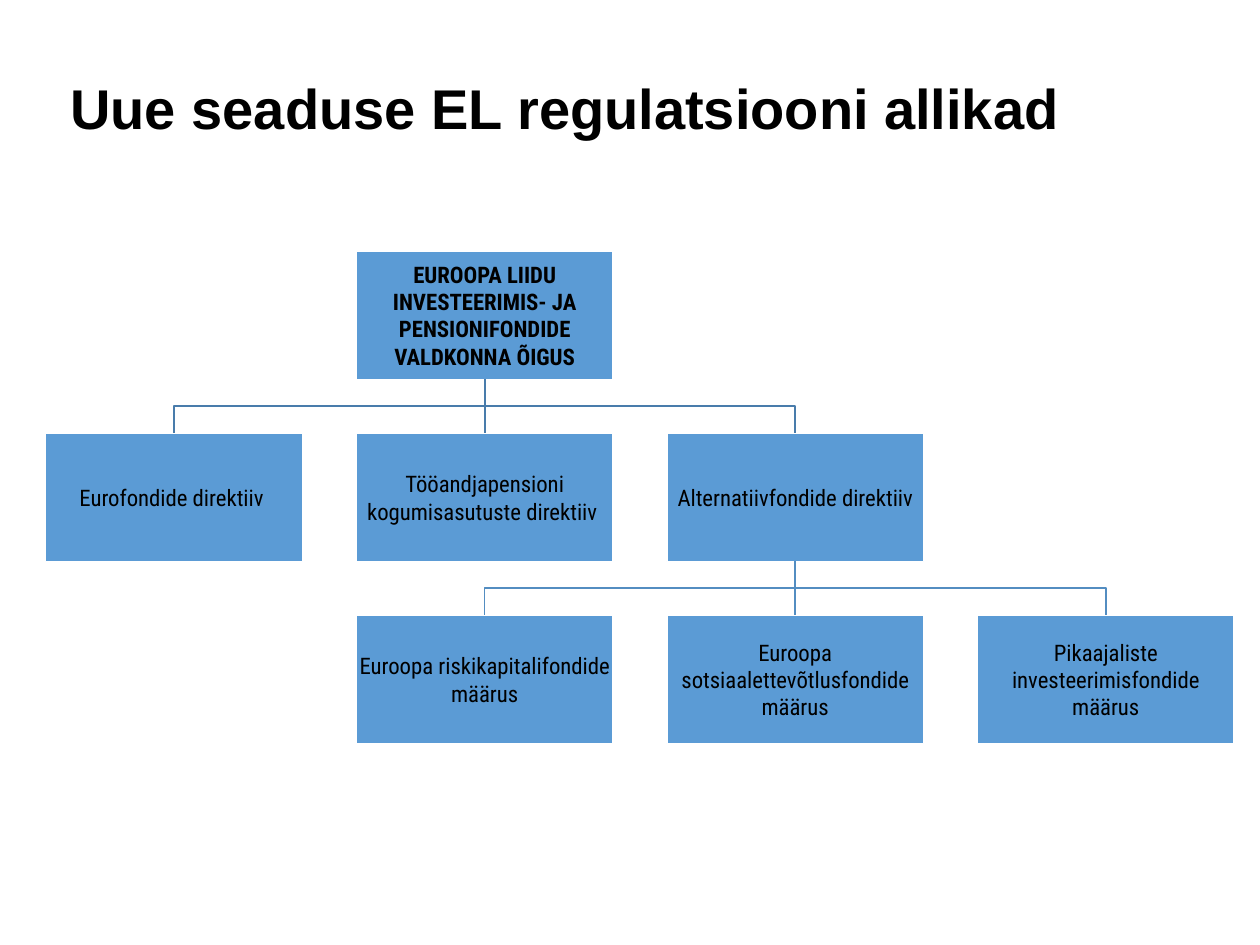
from lxml.etree import SubElement
from pptx import Presentation
from pptx.dml.color import RGBColor
from pptx.enum.shapes import MSO_CONNECTOR, MSO_SHAPE
from pptx.enum.text import MSO_ANCHOR, PP_ALIGN
from pptx.oxml.ns import qn
from pptx.util import Cm, Pt

THEME = {
    "text": RGBColor.from_string("000000"),
    "box": RGBColor.from_string("5B9BD5"),
    "border": RGBColor.from_string("FFFFFF"),
    "upper_link": RGBColor.from_string("497CAB"),
    "lower_link": RGBColor.from_string("538DC1"),
    "line": Pt(1),
    "title": {"name": "Arial", "size": Pt(32), "bold": True},
    "root": {"name": "Roboto Condensed", "size": Pt(13), "bold": True},
    "node": {"name": "Roboto Condensed", "size": Pt(13), "bold": False},
}


def write(shape, wording, style, frame_format, paragraph_format):
    frame = shape.text_frame
    paragraph = frame.paragraphs[0]
    run = paragraph.add_run()
    run.text = wording
    run.font.color.rgb = THEME["text"]
    for target, values in ((frame, frame_format), (paragraph, paragraph_format),
                           (run.font, THEME[style])):
        for name, value in values.items():
            setattr(target, name, value)


presentation = Presentation()
presentation.slide_width, presentation.slide_height = Cm(25.4), Cm(19.05)
slide = presentation.slides.add_slide(presentation.slide_layouts[6])
shapes = slide.shapes

# Title
heading = shapes.add_textbox(Cm(1.42), Cm(1.5), Cm(22.35), Cm(3))
write(heading, "Uue seaduse EL regulatsiooni allikad", "title",
      {"word_wrap": True, "vertical_anchor": MSO_ANCHOR.TOP, "margin_left": 0,
       "margin_right": 0, "margin_top": Cm(0.15), "margin_bottom": 0},
      {"line_spacing": 0.88})

# Sources of law on a grid: key, column, row, style, wording
SOURCES = [
    ("eu_law", 1, 0, "root",
     "EUROOPA LIIDU INVESTEERIMIS- JA PENSIONIFONDIDE VALDKONNA ÕIGUS"),
    ("ucits", 0, 1, "node", "Eurofondide direktiiv "),
    ("pension", 1, 1, "node", "Tööandjapensioni kogumisasutuste direktiiv "),
    ("alternative", 2, 1, "node", "Alternatiivfondide direktiiv"),
    ("venture", 1, 2, "node", "Euroopa riskikapitalifondide määrus"),
    ("social", 2, 2, "node", "Euroopa sotsiaalettevõtlusfondide määrus"),
    ("long_term", 3, 2, "node", "Pikaajaliste investeerimisfondide määrus"),
]
LEFT, TOP, COLUMN_STEP, ROW_STEP = Cm(0.92), Cm(5.06), Cm(6.26), Cm(3.67)
WIDTH, HEIGHT = Cm(5.18), Cm(2.59)
BOX_FRAME = {"word_wrap": True, "vertical_anchor": MSO_ANCHOR.MIDDLE}
BOX_FRAME |= {f"margin_{side}": Cm(0.03) for side in ("left", "right", "top", "bottom")}

boxes = {}
for key, column, row, style, wording in SOURCES:
    box = shapes.add_shape(MSO_SHAPE.RECTANGLE, LEFT + column * COLUMN_STEP,
                           TOP + row * ROW_STEP, WIDTH, HEIGHT)
    box.shadow.inherit = False
    box.fill.solid()
    box.fill.fore_color.rgb = THEME["box"]
    box.line.color.rgb = THEME["border"]
    box.line.width = THEME["line"]
    write(box, wording, style, BOX_FRAME, {"alignment": PP_ALIGN.CENTER})
    boxes[key] = box

# Links: straight to the child below, stepped to the children at the sides
BRANCHES = [
    ("eu_law", ("ucits", "pension", "alternative"), "upper_link"),
    ("alternative", ("venture", "social", "long_term"), "lower_link"),
]
for parent_key, child_keys, link_color in BRANCHES:
    parent = boxes[parent_key]
    start_x, start_y = parent.left + WIDTH // 2, parent.top + HEIGHT
    for child_key in child_keys:
        child = boxes[child_key]
        end_x, end_y = child.left + WIDTH // 2, child.top
        if end_x == start_x:
            link = shapes.add_connector(MSO_CONNECTOR.STRAIGHT,
                                        start_x, start_y, end_x, end_y)
            link.begin_connect(parent, 2)
            link.end_connect(child, 0)
            SubElement(link._element.spPr, qn("a:effectLst"))
        else:
            bend_y = (start_y + end_y) // 2
            outline = shapes.build_freeform(start_x, start_y)
            outline.add_line_segments(
                [(start_x, bend_y), (end_x, bend_y), (end_x, end_y)], close=False)
            link = outline.convert_to_shape()
            link.fill.background()
            link.shadow.inherit = False
        link.line.color.rgb = THEME[link_color]
        link.line.width = THEME["line"]

presentation.save("out.pptx")
